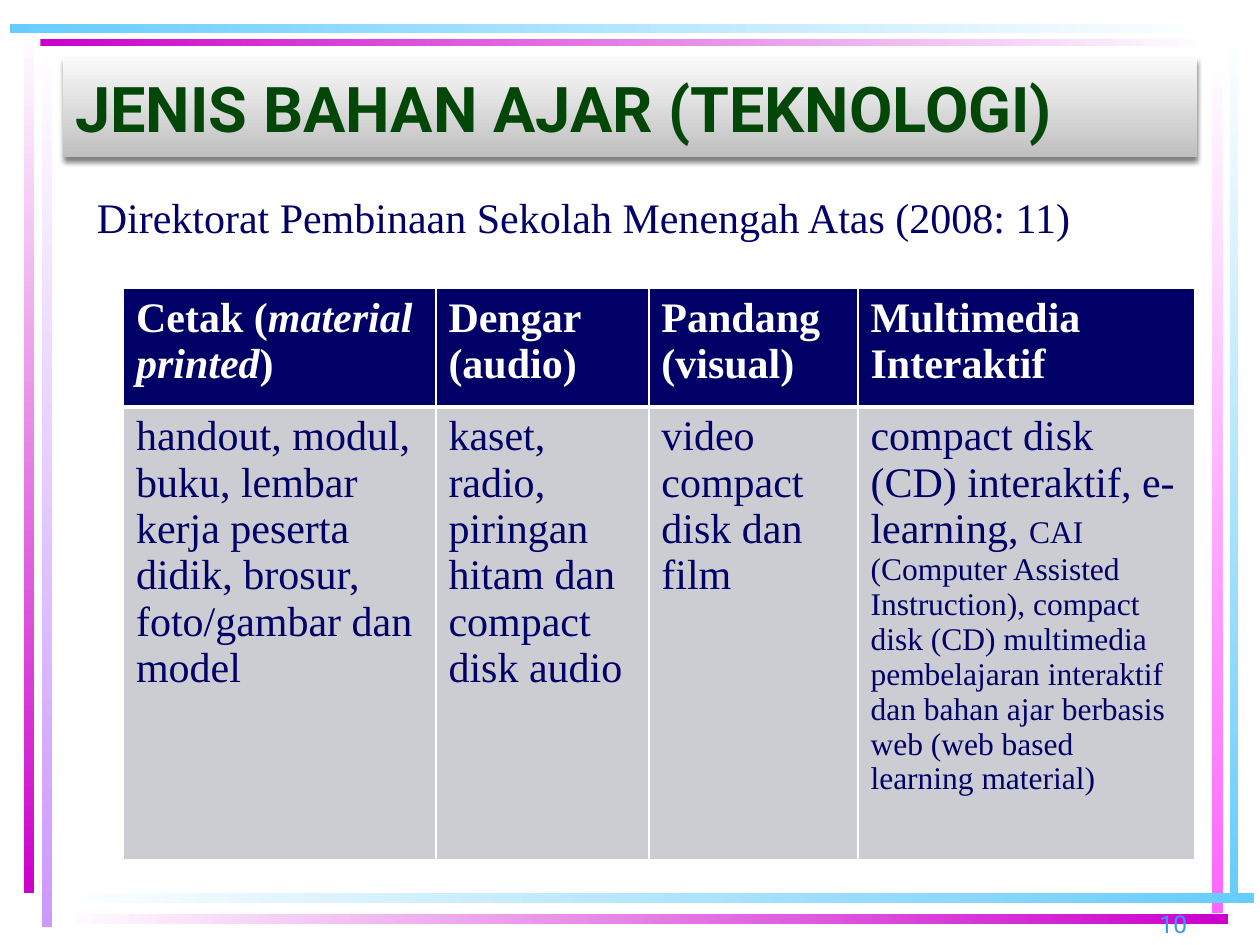
from dataclasses import dataclass

from lxml import etree
from pptx import Presentation
from pptx.dml.color import RGBColor
from pptx.enum.shapes import MSO_SHAPE
from pptx.enum.text import MSO_ANCHOR, PP_ALIGN
from pptx.oxml import parse_xml
from pptx.oxml.ns import nsdecls, qn
from pptx.util import Inches, Pt

RECTANGLE = MSO_SHAPE.RECTANGLE
MIDDLE, BOTTOM, TOP = MSO_ANCHOR.MIDDLE, MSO_ANCHOR.BOTTOM, MSO_ANCHOR.TOP
LEFT, RIGHT = PP_ALIGN.LEFT, PP_ALIGN.RIGHT

COLORS = {
    "white": "FFFFFF", "navy": "000066", "cell": "CCCCD3", "green": "024608",
    "purple": "CC00CC", "lilac": "CC99FF", "sky": "66CCFF", "pink": "FF66FF",
    "number": "3399FF", "silver": "FAFAFA", "gray": "BFBFBF",
}
SERIF, SANS = "Times New Roman", "Roboto"
DOWN, ACROSS = 270, 0


@dataclass(frozen=True)
class Bar:
    left: float
    top: float
    width: float
    height: float
    start: str
    end: str
    angle: int


@dataclass(frozen=True)
class Span:
    text: str
    style: dict


BARS = [
    Bar(0.33, 0.28, 0.08, 7.08, "white", "lilac", DOWN),
    Bar(0.19, 0.25, 0.08, 6.84, "white", "purple", DOWN),
    Bar(9.76, 0.24, 0.07, 6.93, "white", "sky", DOWN),
    Bar(9.62, 0.42, 0.09, 6.83, "white", "pink", DOWN),
    Bar(0.45, 7.09, 9.5, 0.08, "white", "sky", ACROSS),
    Bar(0.45, 7.25, 9.3, 0.08, "white", "purple", ACROSS),
    Bar(0.32, 0.31, 9.32, 0.06, "purple", "white", ACROSS),
    Bar(0.08, 0.19, 9.56, 0.07, "sky", "white", ACROSS),
]
TITLE_BAR = Bar(0.5, 0.46, 9, 0.79, "silver", "gray", DOWN)

HEAD = {"name": SERIF, "size": Pt(24), "color": "white", "bold": True}
BODY = {"name": SERIF, "size": Pt(24), "color": "navy", "bold": False}
COLUMN_WIDTHS = [2.48, 1.69, 1.66, 2.67]
ROW_HEIGHTS = [0.94, 3.59]
HEAD_CELLS = [
    [Span("Cetak (", HEAD), Span("material printed", HEAD | {"italic": True}), Span(")", HEAD)],
    [Span("Dengar (audio)", HEAD)],
    [Span("Pandang (visual)", HEAD)],
    [Span("Multimedia Interaktif", HEAD)],
]
BODY_CELLS = [
    [Span("handout, modul, buku, lembar kerja peserta didik, brosur, foto/gambar dan model", BODY)],
    [Span("kaset, radio, piringan hitam dan compact disk audio", BODY)],
    [Span("video compact disk dan film", BODY)],
    [
        Span("compact disk (CD) interaktif, e-learning, ", BODY),
        Span(
            "CAI (Computer Assisted Instruction), compact disk (CD) multimedia pembelajaran "
            "interaktif dan bahan ajar berbasis web (web based learning material)",
            BODY | {"size": Pt(18)},
        ),
    ],
]


def color(name: str) -> RGBColor:
    return RGBColor.from_string(COLORS[name])


def write(frame, spans: list[Span], align=LEFT, anchor=TOP) -> None:
    frame.word_wrap = True
    frame.vertical_anchor = anchor
    para = frame.paragraphs[0]
    para.alignment = align
    for span in spans:
        run = para.add_run()
        run.text = span.text
        for key, value in span.style.items():
            if key == "color":
                run.font.color.rgb = color(value)
            else:
                setattr(run.font, key, value)


def add_bar(slide, bar: Bar):
    box = slide.shapes.add_shape(
        RECTANGLE, Inches(bar.left), Inches(bar.top), Inches(bar.width), Inches(bar.height)
    )
    box.shadow.inherit = False
    box.line.fill.background()
    box.fill.gradient()
    box.fill.gradient_angle = bar.angle
    for stop, name in zip(box.fill.gradient_stops, (bar.start, bar.end)):
        stop.color.rgb = color(name)
    return box


def add_shadow(box) -> None:
    effects = box.element.spPr.find(qn("a:effectLst"))
    shadow = etree.SubElement(
        effects, qn("a:outerShdw"), blurRad="40000", dist="23000", dir="5400000", rotWithShape="0"
    )
    tone = etree.SubElement(shadow, qn("a:srgbClr"), val="000000")
    etree.SubElement(tone, qn("a:alpha"), val="50000")


def add_text(slide, left: float, top: float, width: float, height: float,
             span: Span, align=LEFT, anchor=TOP) -> None:
    box = slide.shapes.add_textbox(Inches(left), Inches(top), Inches(width), Inches(height))
    write(box.text_frame, [span], align, anchor)


def set_borders(cell, widths: dict[str, int]) -> None:
    properties = cell._tc.get_or_add_tcPr()
    for index, (side, width) in enumerate(widths.items()):
        border = parse_xml(
            f'<a:ln{side} {nsdecls("a")} w="{Pt(width)}"><a:solidFill>'
            f'<a:srgbClr val="{COLORS["white"]}"/></a:solidFill></a:ln{side}>'
        )
        properties.insert(index, border)


def add_material_table(slide) -> None:
    table = slide.shapes.add_table(
        len(ROW_HEIGHTS), len(COLUMN_WIDTHS), Inches(0.98), Inches(2.29),
        Inches(sum(COLUMN_WIDTHS)), Inches(sum(ROW_HEIGHTS)),
    ).table
    for column, width in zip(table.columns, COLUMN_WIDTHS):
        column.width = Inches(width)
    for row, height in zip(table.rows, ROW_HEIGHTS):
        row.height = Inches(height)
    rows = [
        (HEAD_CELLS, "navy", {"L": 1, "R": 1, "T": 1, "B": 3}),
        (BODY_CELLS, "cell", {"L": 1, "R": 1, "T": 3, "B": 1}),
    ]
    for row, (contents, fill, widths) in zip(table.rows, rows):
        for cell, spans in zip(row.cells, contents):
            cell.fill.solid()
            cell.fill.fore_color.rgb = color(fill)
            set_borders(cell, widths)
            write(cell.text_frame, spans)


def main() -> None:
    deck = Presentation()
    deck.slide_width, deck.slide_height = Inches(10), Inches(7.5)
    slide = deck.slides.add_slide(deck.slide_layouts[6])
    for bar in BARS:
        add_bar(slide, bar)
    title = add_bar(slide, TITLE_BAR)
    add_shadow(title)
    title_style = {"name": SANS, "size": Pt(36), "color": "green", "bold": True}
    write(title.text_frame, [Span("JENIS BAHAN AJAR (TEKNOLOGI)", title_style)], anchor=MIDDLE)
    number_style = {"name": SANS, "size": Pt(14), "color": "number"}
    add_text(slide, 7.19, 7.1, 2.33, 0.4, Span("10", number_style), RIGHT, BOTTOM)
    add_material_table(slide)
    source = Span("Direktorat Pembinaan Sekolah Menengah Atas (2008: 11)", BODY)
    add_text(slide, 0.67, 1.47, 8.98, 0.5, source)
    deck.save("out.pptx")


if __name__ == "__main__":
    main()
